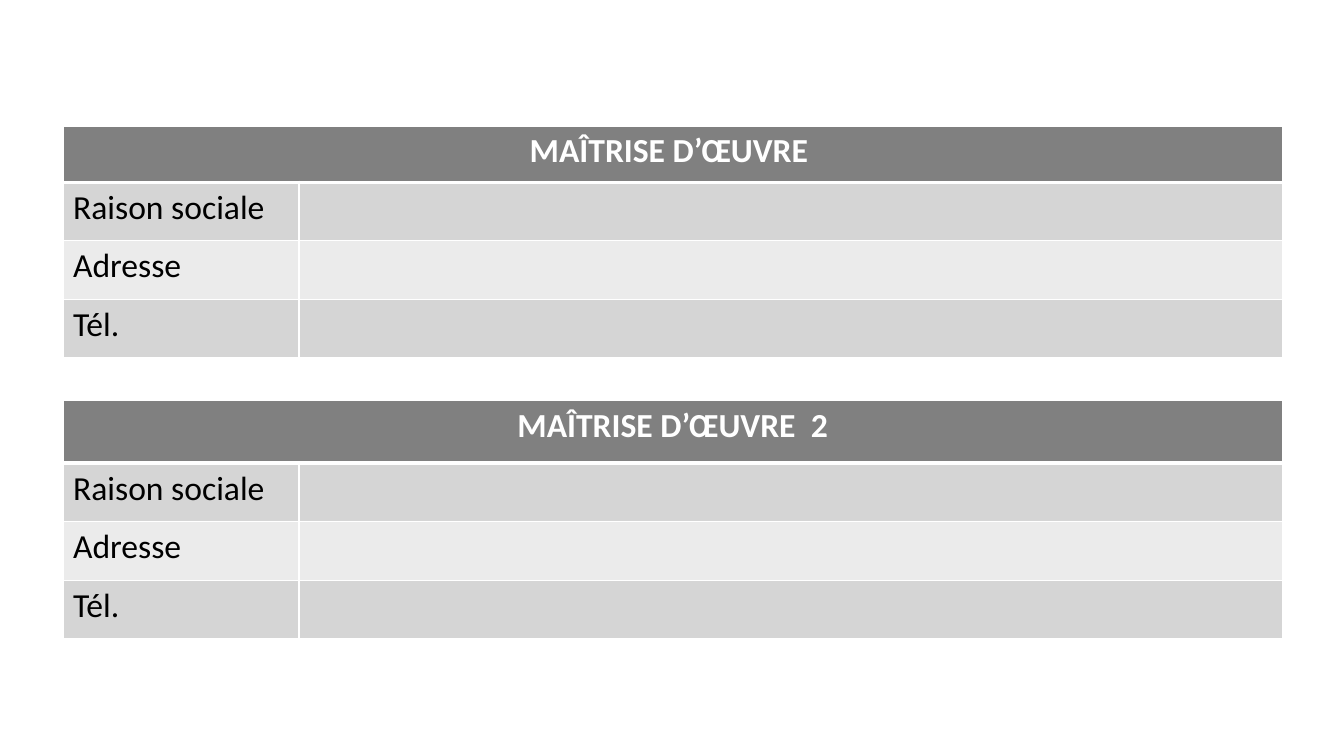
from lxml import etree
from pptx import Presentation
from pptx.dml.color import RGBColor
from pptx.enum import text
from pptx.oxml.ns import qn
from pptx.util import Pt

LEFT = 45
COLUMN_WIDTHS = (168.5, 702.5)
FIELD_HEIGHT = 41.8
FIELDS = ("Raison sociale", "Adresse", "Tél.")
HEADER_FILL = "808080"
FIELD_FILLS = ("D5D5D5", "EBEBEB")
WHITE, BLACK = "FFFFFF", "000000"
# (heading, top, heading row height)
CONTRACTORS = (
    ("MAÎTRISE D’ŒUVRE ", 90, 40.3),
    ("MAÎTRISE D’ŒUVRE  2", 286.2, 44.6),
)


def colour(value):
    return RGBColor.from_string(value)


def set_borders(cell, widths):
    """Draw white cell borders; widths maps each side (L, R, T, B) to points."""
    properties = cell._tc.get_or_add_tcPr()
    for side, width in widths.items():
        line = etree.SubElement(properties, qn(f"a:ln{side}"), w=str(Pt(width)))
        fill = etree.SubElement(line, qn("a:solidFill"))
        etree.SubElement(fill, qn("a:srgbClr"), val=WHITE)


def format_cell(cell, fill, top=1, bottom=1):
    set_borders(cell, {"L": 1, "R": 1, "T": top, "B": bottom})
    cell.fill.solid()
    cell.fill.fore_color.rgb = colour(fill)


def write(cell, words, font_colour, bold=False, align=text.PP_ALIGN.LEFT):
    paragraph = cell.text_frame.paragraphs[0]
    paragraph.alignment = align
    run = paragraph.add_run()
    run.text = words
    run.font.color.rgb = colour(font_colour)
    for name, value in {"name": "Calibri", "size": Pt(24), "bold": bold}.items():
        setattr(run.font, name, value)


def add_contact_table(slide, heading, top, heading_height):
    heights = [heading_height] + [FIELD_HEIGHT] * len(FIELDS)
    table = slide.shapes.add_table(
        len(heights), len(COLUMN_WIDTHS), Pt(LEFT), Pt(top),
        Pt(sum(COLUMN_WIDTHS)), Pt(sum(heights))).table
    for column, width in zip(table.columns, COLUMN_WIDTHS):
        column.width = Pt(width)
    for row, height in zip(table.rows, heights):
        row.height = Pt(height)

    for cell in table.rows[0].cells:
        format_cell(cell, HEADER_FILL, bottom=3)
    table.cell(0, 0).merge(table.cell(0, 1))
    write(table.cell(0, 0), heading, WHITE, True, text.PP_ALIGN.CENTER)

    for index, field in enumerate(FIELDS):
        for cell in table.rows[index + 1].cells:
            format_cell(cell, FIELD_FILLS[index % 2], top=1 if index else 3)
        write(table.cell(index + 1, 0), field, BLACK)


def main():
    presentation = Presentation()
    presentation.slide_width, presentation.slide_height = Pt(960), Pt(540)
    slide = presentation.slides.add_slide(presentation.slide_layouts[6])
    for contractor in CONTRACTORS:
        add_contact_table(slide, *contractor)
    presentation.save("out.pptx")


if __name__ == "__main__":
    main()
